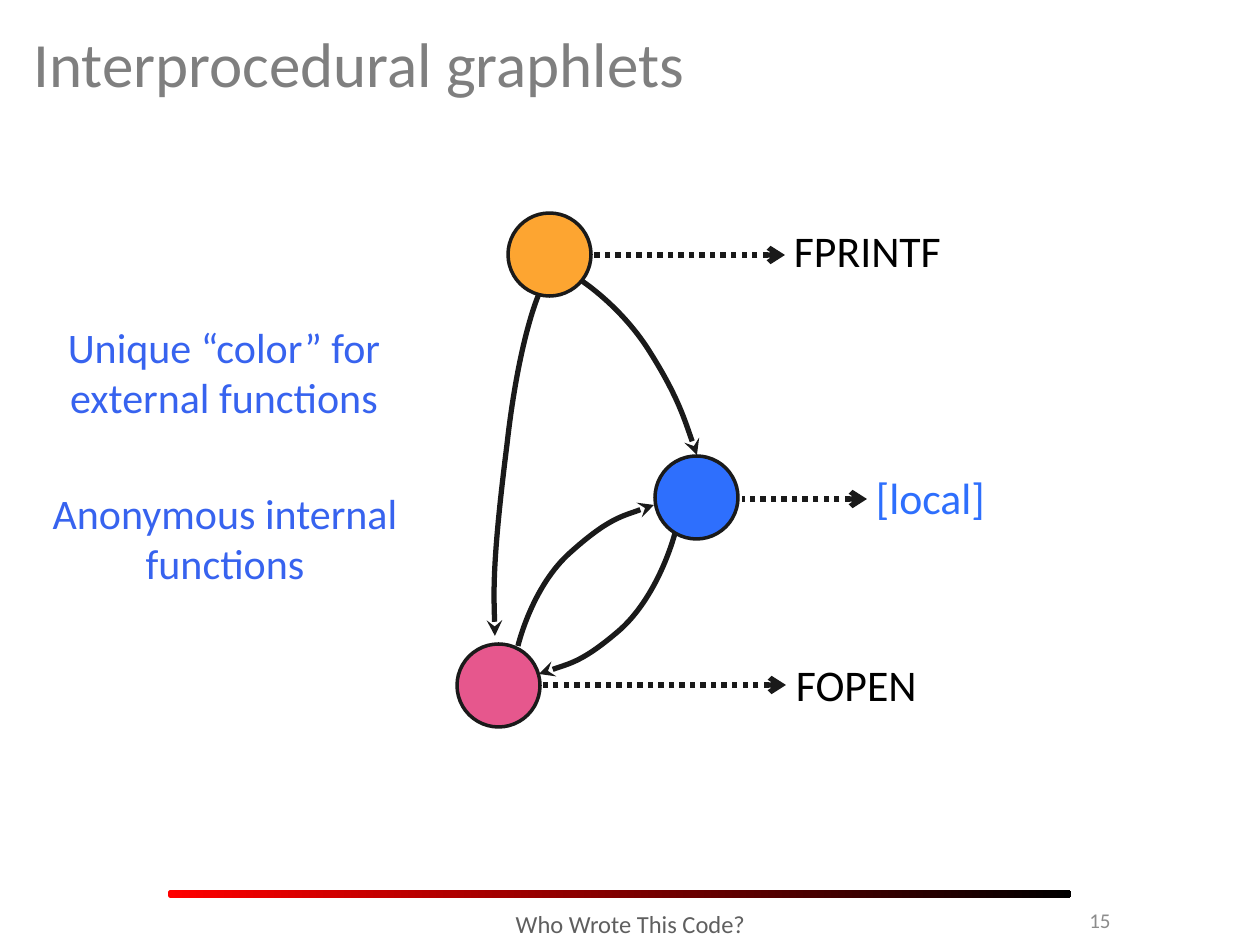
from lxml.etree import SubElement
from pptx import Presentation
from pptx.dml.color import RGBColor
from pptx.enum.dml import MSO_LINE
from pptx.enum.shapes import MSO_CONNECTOR, MSO_SHAPE
from pptx.enum.text import MSO_ANCHOR, MSO_AUTO_SIZE, PP_ALIGN
from pptx.oxml.ns import qn
from pptx.util import Emu, Pt

PX = 914400 / 126
FONT = "Calibri"
BLACK = RGBColor(0x00, 0x00, 0x00)
INK = RGBColor(0x1A, 0x1A, 0x1A)
RED = RGBColor(0xFF, 0x00, 0x00)
ORANGE = RGBColor(0xFD, 0xA5, 0x31)
BLUE = RGBColor(0x2E, 0x6F, 0xFD)
PINK = RGBColor(0xE6, 0x57, 0x8D)
NOTE_BLUE = RGBColor(0x37, 0x63, 0xEF)
TITLE_GRAY = RGBColor(0x7F, 0x7F, 0x7F)
FOOTER_GRAY = RGBColor(0x5F, 0x5F, 0x5F)
NUMBER_GRAY = RGBColor(0x8C, 0x8C, 0x8C)

NODE_SIZE = 83
# Per node: left, top, fill
NODES = [(58, 13, ORANGE), (205, 256, BLUE), (7, 444, PINK)]
# Per label: text, left, top, width, colour
LABELS = [
    ("FPRINTF", 344, 24, 163, BLACK),
    ("[local]", 426, 271, 116, BLUE),
    ("FOPEN", 346, 458, 136, BLACK),
]
# Per dotted pointer: label end, node end, height
POINTERS = [(335, 142, 55), (417, 292, 299), (336, 93, 485)]
# Per call edge: start, bend, middle, bend, end
CALLS = [
    [(89, 94), (69, 138), (57, 245), (41, 371), (45, 436)],
    [(132, 81), (172, 107), (200, 152), (229, 198), (247, 255)],
    [(68, 446), (82, 386), (121, 352), (160, 317), (204, 305)],
    [(225, 333), (210, 393), (171, 429), (132, 463), (89, 474)],
]


def px(*lengths):
    return [Emu(round(length * PX)) for length in lengths]


def write(frame, text, *, size, color, align=PP_ALIGN.LEFT,
          anchor=MSO_ANCHOR.TOP, wrap=True, margin=None, grow=False):
    frame.word_wrap = wrap
    frame.auto_size = MSO_AUTO_SIZE.SHAPE_TO_FIT_TEXT if grow else MSO_AUTO_SIZE.NONE
    frame.vertical_anchor = anchor
    if margin is not None:
        frame.margin_left = frame.margin_right = margin
        frame.margin_top = frame.margin_bottom = margin
    paragraph = frame.paragraphs[0]
    paragraph.alignment = align
    run = paragraph.add_run()
    run.text = text
    run.font.name = FONT
    run.font.size = Pt(size)
    run.font.color.rgb = color


def add_text(slide, box, text, **style):
    write(slide.shapes.add_textbox(*px(*box)).text_frame, text, **style)


def ink_line(shape, width):
    shape.line.color.rgb = INK
    shape.line.width = Pt(width)


def add_arrowhead(shape, end, kind):
    SubElement(shape.line._get_or_add_ln(), qn(f"a:{end}"), type=kind)


def add_node(slide, left, top, fill):
    node = slide.shapes.add_shape(
        MSO_SHAPE.OVAL, *px(left, top, NODE_SIZE, NODE_SIZE))
    node.shadow.inherit = False
    node.fill.solid()
    node.fill.fore_color.rgb = fill
    ink_line(node, 2)


def add_pointer(slide, label_x, node_x, y):
    pointer = slide.shapes.add_connector(
        MSO_CONNECTOR.STRAIGHT, *px(label_x, y, node_x, y))
    ink_line(pointer, 3)
    pointer.line.dash_style = MSO_LINE.ROUND_DOT
    add_arrowhead(pointer, "headEnd", "arrow")
    SubElement(pointer._element.spPr, qn("a:effectLst"))


def add_call(slide, points):
    start, *_, end = points
    builder = slide.shapes.build_freeform(*px(*start))
    builder.add_line_segments(
        [px(*point) for point in [start, *points[1:], end]], close=False)
    call = builder.convert_to_shape()
    call.shadow.inherit = False
    call.fill.background()
    ink_line(call, 3)
    add_arrowhead(call, "tailEnd", "stealth")

    # Every three vertices become one cubic curve
    outline = call._element.spPr.find(".//" + qn("a:path"))
    vertices = outline.findall(qn("a:lnTo"))
    for first in range(0, len(vertices), 3):
        curve = SubElement(outline, qn("a:cubicBezTo"))
        for vertex in vertices[first:first + 3]:
            curve.append(vertex[0])
            outline.remove(vertex)


def add_title(slide, box):
    title = slide.shapes.title
    title.left, title.top, title.width, title.height = px(*box)
    write(title.text_frame, "Interprocedural graphlets", size=36,
          color=TITLE_GRAY, anchor=MSO_ANCHOR.MIDDLE)


def add_graph(slide, left, top):
    for x, y, fill in NODES:
        add_node(slide, left + x, top + y, fill)
    for points in CALLS:
        add_call(slide, [(left + x, top + y) for x, y in points])
    for label_x, node_x, y in POINTERS:
        add_pointer(slide, left + label_x, left + node_x, top + y)
    for text, x, y, width, color in LABELS:
        add_text(slide, (left + x, top + y, width, 53), text, size=25, color=color,
                 anchor=MSO_ANCHOR.MIDDLE, wrap=False, margin=0, grow=True)


def add_notes_column(slide, left, top, width):
    notes = ["Unique “color” for external functions", "Anonymous internal functions"]
    for row, note in enumerate(notes):
        add_text(slide, (left + row, top + 166 * row, width, 115), note, size=24,
                 color=NOTE_BLUE, align=PP_ALIGN.CENTER, grow=True)


def add_footer(slide, left, top, width):
    bar = slide.shapes.add_shape(
        MSO_SHAPE.ROUNDED_RECTANGLE, *px(left, top, width, 8))
    bar.adjustments[0] = 0.33
    bar.shadow.inherit = False
    bar.line.fill.background()
    bar.fill.gradient()
    bar.fill.gradient_angle = 0
    for stop, color in zip(bar.fill.gradient_stops, (RED, BLACK)):
        stop.color.rgb = color
    add_text(slide, (left + 137, top + 13, 651, 50), "Who Wrote This Code?",
             size=14, color=FOOTER_GRAY, align=PP_ALIGN.CENTER)
    add_text(slide, (left + 787, top + 5, 168, 50), "15", size=12,
             color=NUMBER_GRAY, align=PP_ALIGN.RIGHT, anchor=MSO_ANCHOR.MIDDLE)


def main():
    presentation = Presentation()
    presentation.slide_width, presentation.slide_height = px(1260, 945)
    slide = presentation.slides.add_slide(presentation.slide_layouts[5])
    add_footer(slide, 168, 890, 903)
    add_title(slide, (21, 10, 1218, 105))
    add_graph(slide, 450, 200)
    add_notes_column(slide, -3, 315, 454)
    presentation.save("out.pptx")


if __name__ == "__main__":
    main()
